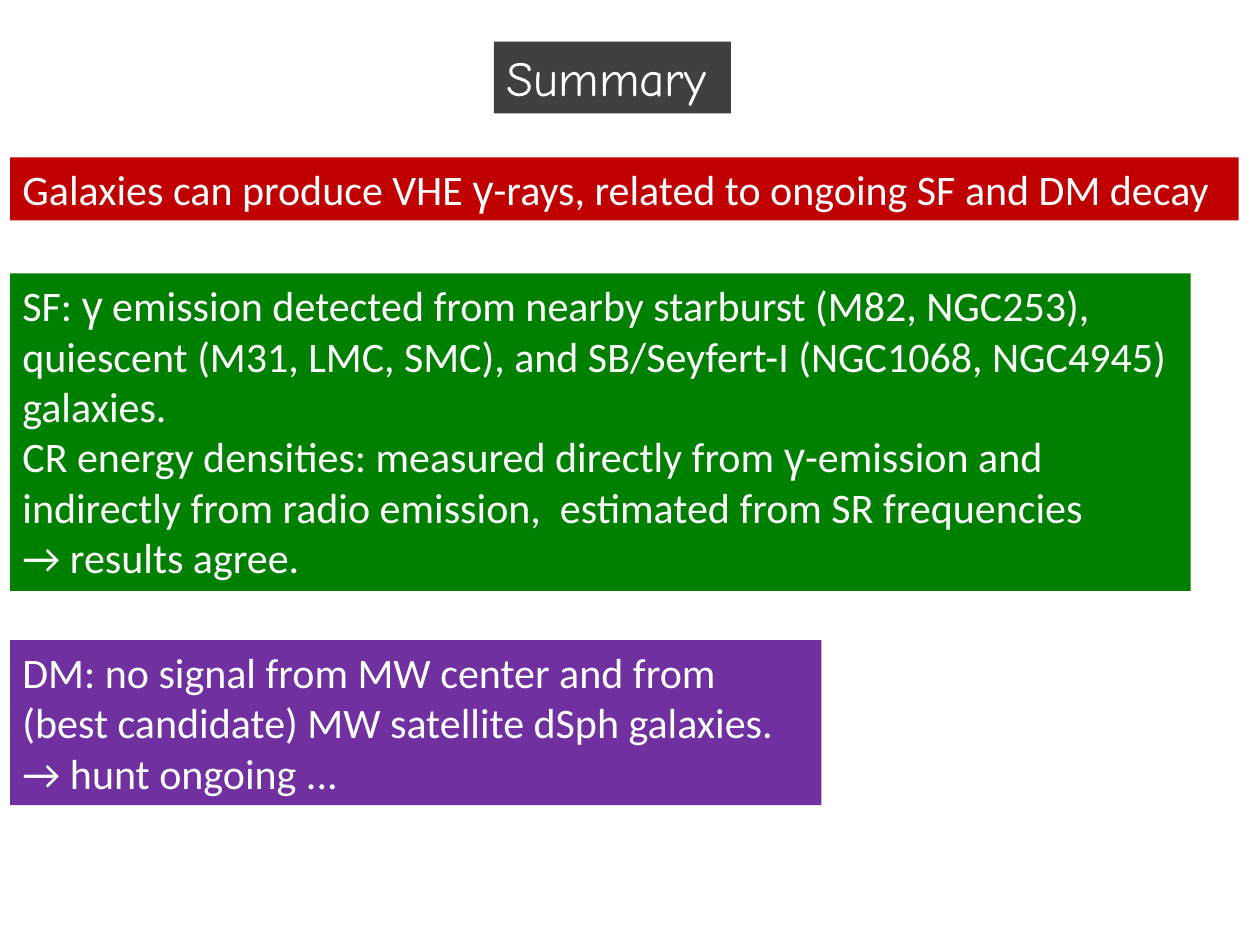
from pptx import Presentation
from pptx.dml.color import RGBColor
from pptx.enum.text import MSO_ANCHOR, MSO_AUTO_SIZE, PP_ALIGN
from pptx.util import Inches, Pt

TOP = MSO_ANCHOR.TOP
NO_AUTOFIT = MSO_AUTO_SIZE.NONE
LEFT = PP_ALIGN.LEFT

WHITE = RGBColor(0xFF, 0xFF, 0xFF)
GRAY = RGBColor(0x40, 0x40, 0x40)
RED = RGBColor(0xC0, 0x00, 0x00)
GREEN = RGBColor(0x00, 0x80, 0x00)
PURPLE = RGBColor(0x70, 0x30, 0xA0)

TITLE_LAYOUT = 5
BODY_FONT = "Calibri"
GREEK_FONT = "Arial"
GAMMA = "γ"
MARGIN = 0.08

# Top, width, height, fill and lines of each statement
STATEMENTS = [
    (1.25, 9.75, 0.5, RED, [
        "Galaxies can produce VHE γ-rays, related to ongoing SF and DM decay",
    ]),
    (2.17, 9.37, 2.52, GREEN, [
        "SF: γ emission detected from nearby starburst (M82, NGC253),",
        "quiescent (M31, LMC, SMC), and SB/Seyfert-I (NGC1068, NGC4945)",
        "galaxies.",
        "CR energy densities: measured directly from γ-emission and",
        "indirectly from radio emission,  estimated from SR frequencies",
        "→ results agree.",
    ]),
    (5.08, 6.44, 1.31, PURPLE, [
        "DM: no signal from MW center and from",
        "(best candidate) MW satellite dSph galaxies.",
        "→ hunt ongoing ...",
    ]),
]


def format_box(shape, color):
    shape.fill.solid()
    shape.fill.fore_color.rgb = color
    text_frame = shape.text_frame
    text_frame.word_wrap = True
    text_frame.auto_size = NO_AUTOFIT
    text_frame.vertical_anchor = TOP


def format_run(run, font_name, size):
    run.font.name = font_name
    run.font.size = Pt(size)
    run.font.color.rgb = WHITE


def fill_paragraph(paragraph, line):
    """Write the line as runs, with the Greek letter in its own font."""
    paragraph.alignment = LEFT
    for part in filter(None, line.partition(GAMMA)):
        run = paragraph.add_run()
        run.text = part
        format_run(run, GREEK_FONT if part == GAMMA else BODY_FONT, 24)


def add_title(slide, text):
    title = slide.shapes.title
    title.left, title.top = Inches(3.92), Inches(0.33)
    title.width, title.height = Inches(1.88), Inches(0.57)
    format_box(title, GRAY)
    title.text_frame.text = text
    paragraph = title.text_frame.paragraphs[0]
    paragraph.alignment = LEFT
    format_run(paragraph.runs[0], "Comic Neue", 28)


def add_statement(slide, top, width, height, color, lines):
    box = slide.shapes.add_textbox(
        Inches(MARGIN), Inches(top), Inches(width), Inches(height))
    format_box(box, color)
    text_frame = box.text_frame
    for index, line in enumerate(lines):
        paragraph = text_frame.add_paragraph() if index else text_frame.paragraphs[0]
        fill_paragraph(paragraph, line)


def main():
    presentation = Presentation()
    presentation.slide_width = Inches(10)
    presentation.slide_height = Inches(7.5)
    slide = presentation.slides.add_slide(presentation.slide_layouts[TITLE_LAYOUT])
    add_title(slide, "Summary")
    for statement in STATEMENTS:
        add_statement(slide, *statement)
    presentation.save("out.pptx")


if __name__ == "__main__":
    main()
